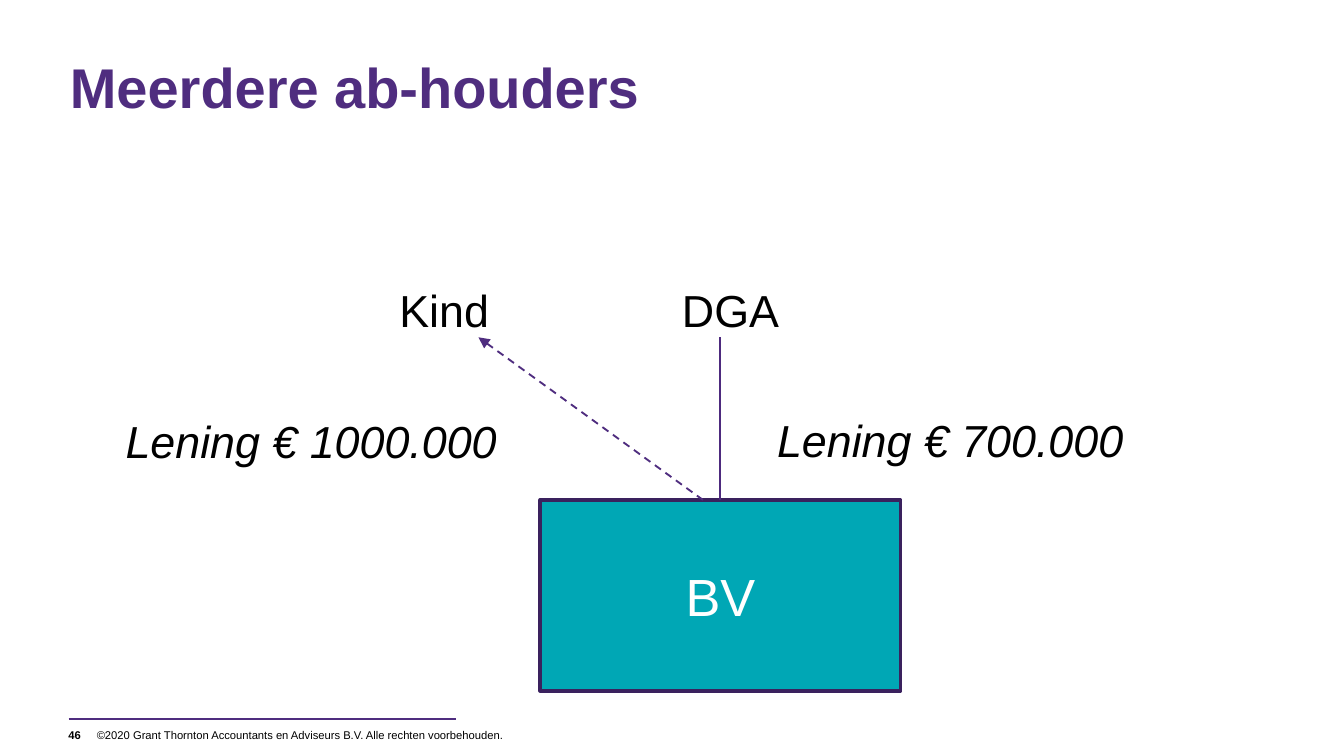
from pptx import Presentation
from pptx.dml.color import RGBColor
from pptx.enum.dml import MSO_LINE
from pptx.enum.shapes import MSO_CONNECTOR, MSO_SHAPE
from pptx.enum.text import MSO_ANCHOR, PP_ALIGN
from pptx.oxml.ns import qn
from pptx.util import Inches, Pt
from lxml import etree


def rgb(color):
    return RGBColor.from_string(color)


def write(shape, text, size, color, align=PP_ALIGN.LEFT, anchor=MSO_ANCHOR.MIDDLE,
          inset=(0, 0), bold=False, italic=False):
    tf = shape.text_frame
    frame = {"word_wrap": True, "vertical_anchor": anchor,
             "margin_left": Inches(inset[0]), "margin_right": Inches(inset[0]),
             "margin_top": Inches(inset[1]), "margin_bottom": Inches(inset[1])}
    for name, value in frame.items():
        setattr(tf, name, value)
    p = tf.paragraphs[0]
    p.alignment = align
    r = p.add_run()
    r.text = text
    font = {"name": "Arial", "size": Pt(size), "bold": bold, "italic": italic}
    for name, value in font.items():
        setattr(r.font, name, value)
    r.font.color.rgb = rgb(color)


PURPLE = "4F2D7F"

# 16:9 slide
prs = Presentation()
prs.slide_width, prs.slide_height = Inches(10), Inches(10 * 9 / 16)
s = prs.slides.add_slide(prs.slide_layouts[5])

# Title
title = s.shapes.title
title.left, title.top = Inches(0.52), Inches(0.39)
title.width, title.height = Inches(8.97), Inches(0.92)
write(title, "Meerdere ab-houders", 30, PURPLE, anchor=MSO_ANCHOR.TOP, bold=True)

# Footer: page number and copyright
for text, x, w, inset, bold in [
    ("46", 0.51, 0.2, (0, 0), True),
    ("©2020 Grant Thornton Accountants en Adviseurs B.V. Alle rechten voorbehouden.",
     0.72, 3.29, (0, 0.05), False),
]:
    box = s.shapes.add_textbox(Inches(x), Inches(5.37), Inches(w), Inches(0.2))
    write(box, text, 6, "000000", inset=inset, bold=bold)

# Company, shareholders and loans
for text, x, y, w, h, fill, line, size, color, italic in [
    ("BV", 4.02, 3.72, 2.68, 1.42, "00A7B5", "3A215E", 28, "FFFFFF", False),
    ("Kind", 2.52, 1.99, 1.57, 0.63, None, "FFFFFF", 24, "000000", False),
    ("DGA", 4.65, 1.99, 1.57, 0.63, None, "FFFFFF", 24, "000000", False),
    ("Lening € 700.000", 5.36, 3, 3.42, 0.54, None, "FFFFFF", 24, "000000", True),
    ("Lening € 1000.000", 0.52, 2.98, 3.59, 0.59, None, "FFFFFF", 24, "000000", True),
]:
    box = s.shapes.add_shape(MSO_SHAPE.RECTANGLE, Inches(x), Inches(y), Inches(w), Inches(h))
    box.shadow.inherit = False
    if fill:
        box.fill.solid()
        box.fill.fore_color.rgb = rgb(fill)
    else:
        box.fill.background()
    box.line.color.rgb = rgb(line)
    box.line.width = Pt(2)
    write(box, text, size, color, PP_ALIGN.CENTER, inset=(0.1, 0.05), italic=italic)

# Footer rule, shareholding line and dashed arrow to the child
for x1, y1, x2, y2, color, width, arrow in [
    (0.51, 5.35, 3.39, 5.35, PURPLE, 1.5, False),
    (5.36, 3.72, 5.36, 2.51, "4D2A7E", 1, False),
    (5.23, 3.72, 3.56, 2.51, PURPLE, 1, True),
]:
    line = s.shapes.add_connector(MSO_CONNECTOR.STRAIGHT, Inches(x1), Inches(y1),
                                  Inches(x2), Inches(y2))
    line.line.color.rgb = rgb(color)
    line.line.width = Pt(width)
    if arrow:
        line.line.dash_style = MSO_LINE.DASH
        ln = line._element.spPr.find(qn("a:ln"))
        etree.SubElement(ln, qn("a:tailEnd"), type="triangle")
    etree.SubElement(line._element.spPr, qn("a:effectLst"))

prs.save("out.pptx")
